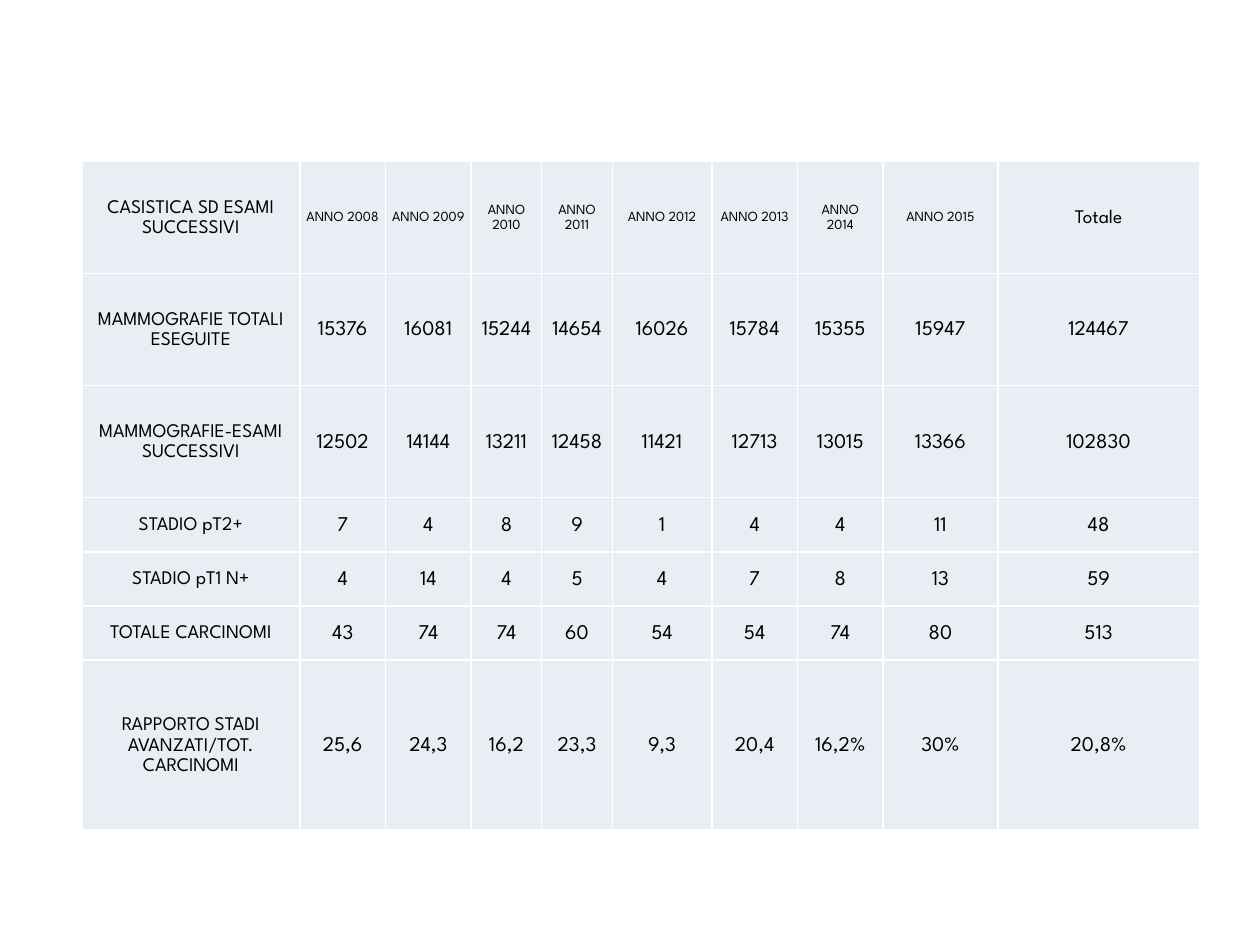
from dataclasses import dataclass

from lxml.etree import SubElement
from pptx import Presentation
from pptx.dml.color import RGBColor
from pptx.enum.text import MSO_ANCHOR, PP_ALIGN
from pptx.oxml.ns import qn
from pptx.util import Inches, Pt


@dataclass(frozen=True)
class Theme:
    font: str = "League Spartan"
    text: str = "000000"
    cell: str = "E9EDF4"
    border: str = "FFFFFF"
    border_width: float = 1
    year_size: float = 8
    label_size: float = 11
    value_size: float = 12
    line_spacing: float = 1.15


# Slide grid: 100 columns by 75 rows of a tenth of an inch
GRID_COLUMNS, GRID_ROWS = 100, 75

# Table layout in grid units
TABLE_LEFT, TABLE_TOP = 6.5, 12.8
COLUMN_WIDTHS = [17.3, 6.8, 6.8, 5.6, 5.6, 7.9, 6.8, 6.8, 9.1, 16]
ROW_HEIGHTS = [8.9] * 3 + [4.3] * 3 + [13.5]

# Table content; a line feed starts a new paragraph
YEARS = [f"ANNO {year}" for year in range(2008, 2016)]
YEARS[6] = "ANNO\n2014"
SCREENING_ROWS = [
    ["CASISTICA SD ESAMI SUCCESSIVI", *YEARS, "Totale"],
    ["MAMMOGRAFIE TOTALI ESEGUITE", 15376, 16081, 15244, 14654, 16026, 15784, 15355, 15947, 124467],
    ["MAMMOGRAFIE-ESAMI SUCCESSIVI", 12502, 14144, 13211, 12458, 11421, 12713, 13015, 13366, 102830],
    ["STADIO pT2+", 7, 4, 8, 9, 1, 4, 4, 11, 48],
    ["STADIO pT1 N+", 4, 14, 4, 5, 4, 7, 8, 13, 59],
    ["TOTALE CARCINOMI", 43, 74, 74, 60, 54, 54, 74, 80, 513],
    ["RAPPORTO STADI AVANZATI/TOT. CARCINOMI",
     "25,6", "24,3", "16,2", "23,3", "9,3", "20,4", "16,2%", "30%", "20,8%"],
]


def write_text(text_frame, text, *, font, size, color, line_spacing, alignment=PP_ALIGN.CENTER):
    """Fill a text frame, one paragraph for each line of the text."""
    for index, line in enumerate(text.split("\n")):
        paragraph = text_frame.add_paragraph() if index else text_frame.paragraphs[0]
        paragraph.alignment = alignment
        paragraph.line_spacing = line_spacing
        run = paragraph.add_run()
        run.text = line
        run.font.name = font
        run.font.size = Pt(size)
        run.font.color.rgb = RGBColor.from_string(color)


class SlideBuilder:
    def __init__(self, presentation, theme):
        self.theme = theme
        self.slide = presentation.slides.add_slide(presentation.slide_layouts[6])
        self.column = presentation.slide_width / GRID_COLUMNS
        self.row = presentation.slide_height / GRID_ROWS

    def across(self, columns):
        return round(columns * self.column)

    def down(self, rows):
        return round(rows * self.row)

    def text_size(self, row, column):
        if column == 0:
            return self.theme.label_size
        if row == 0:
            is_total = column == len(COLUMN_WIDTHS) - 1
            return self.theme.label_size if is_total else self.theme.year_size
        return self.theme.value_size

    def table(self, left, top, widths, heights, content):
        table = self.slide.shapes.add_table(
            len(heights), len(widths), self.across(left), self.down(top),
            self.across(sum(widths)), self.down(sum(heights))).table
        table.first_row = table.horz_banding = False
        for column, width in zip(table.columns, widths):
            column.width = self.across(width)
        for row, height in zip(table.rows, heights):
            row.height = self.down(height)
        for row, values in enumerate(content):
            for column, value in enumerate(values):
                self.cell(table.cell(row, column), str(value), self.text_size(row, column))

    def cell(self, cell, text, size):
        theme = self.theme
        cell.vertical_anchor = MSO_ANCHOR.MIDDLE
        cell.margin_left = cell.margin_right = Inches(0.05)
        cell.margin_top = cell.margin_bottom = 0
        self.borders(cell)
        cell.fill.solid()
        cell.fill.fore_color.rgb = RGBColor.from_string(theme.cell)
        write_text(cell.text_frame, text, font=theme.font, size=size,
                   color=theme.text, line_spacing=theme.line_spacing)

    def borders(self, cell):
        properties = cell._tc.get_or_add_tcPr()
        for side in ("lnL", "lnR", "lnT", "lnB"):
            line = SubElement(properties, qn(f"a:{side}"), w=str(Pt(self.theme.border_width)))
            fill = SubElement(line, qn("a:solidFill"))
            SubElement(fill, qn("a:srgbClr"), val=self.theme.border)


def main():
    presentation = Presentation()
    presentation.slide_width = Inches(10)
    presentation.slide_height = Inches(7.5)

    # Screening results by year
    builder = SlideBuilder(presentation, Theme())
    builder.table(TABLE_LEFT, TABLE_TOP, COLUMN_WIDTHS, ROW_HEIGHTS, SCREENING_ROWS)

    presentation.save("out.pptx")


if __name__ == "__main__":
    main()
